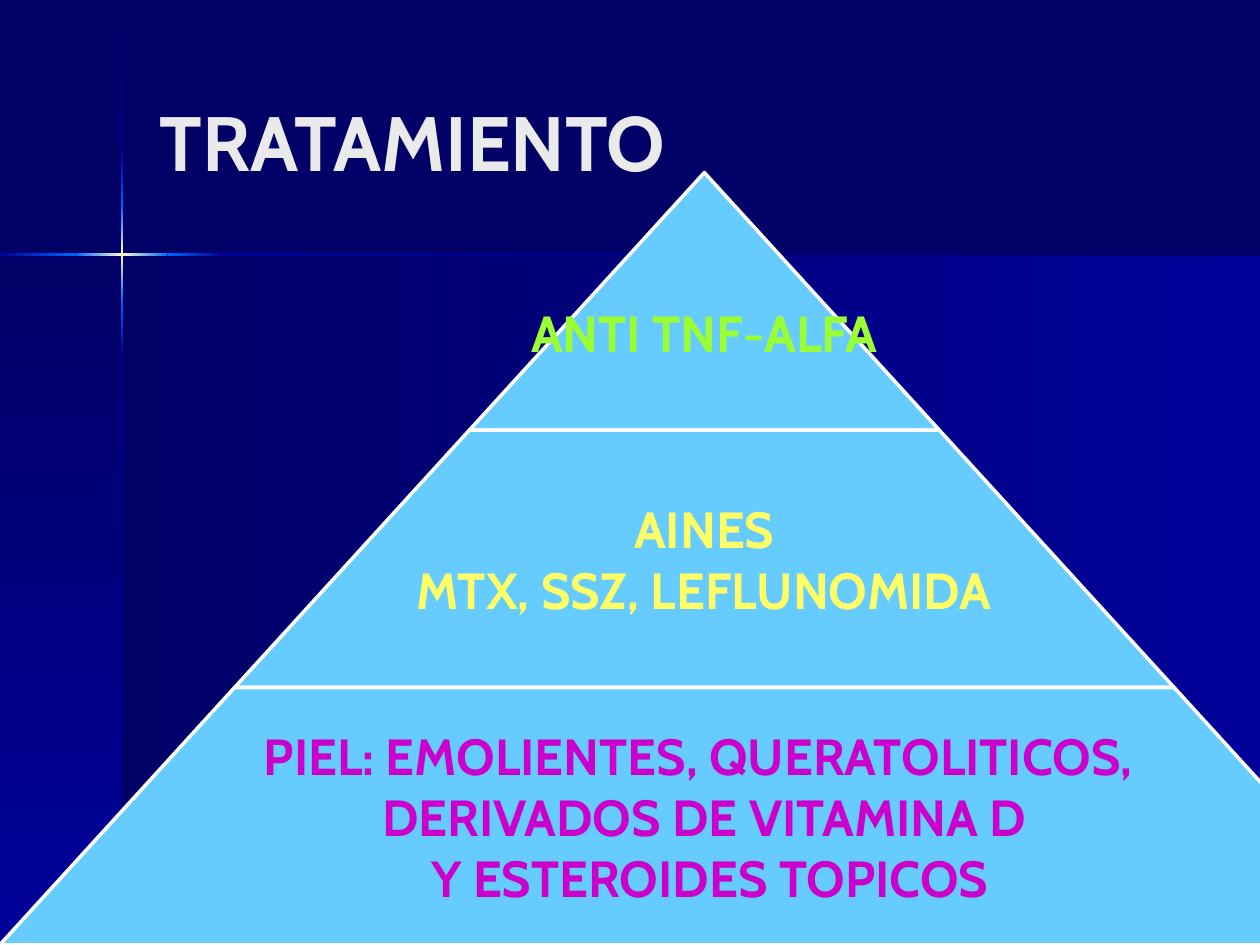
"""Build the treatment pyramid slide."""
from copy import deepcopy

from pptx import Presentation
from pptx.dml.color import RGBColor
from pptx.enum.shapes import MSO_SHAPE as Shape
from pptx.enum.text import MSO_ANCHOR as Anchor, PP_ALIGN as Align
from pptx.oxml.ns import qn
from pptx.util import Cm, Pt

FONT = "Cabin"
NAVY = RGBColor(0x00, 0x00, 0x66)
BLUE = RGBColor(0x00, 0x00, 0x99)
BRIGHT = RGBColor(0x00, 0x66, 0xFF)
CREAM = RGBColor(0xFF, 0xFF, 0xCC)
SKY = RGBColor(0x66, 0xCC, 0xFF)
WHITE = RGBColor(0xFF, 0xFF, 0xFF)
SILVER = RGBColor(0xEA, 0xEA, 0xEA)
LIME = RGBColor(0x99, 0xFF, 0x33)
YELLOW = RGBColor(0xFF, 0xFF, 0x66)
MAGENTA = RGBColor(0xCC, 0x00, 0xCC)

WIDTH, HEIGHT = 25.4, 19.05
CROSS_X, CROSS_Y, BEAM = 2.46, 5.13, 0.05
GLOW = (BRIGHT, CREAM, BRIGHT)
PANELS = [
    (CROSS_X, CROSS_Y, WIDTH - CROSS_X, HEIGHT - CROSS_Y, (NAVY, BLUE), False),
    (0, CROSS_Y, CROSS_X, HEIGHT - CROSS_Y, (NAVY, BLUE), True),
]
VERTICAL_BEAMS = [
    (0.03, 3.07, (NAVY, BLUE)),
    (7.16, HEIGHT, (BLUE, NAVY)),
    (6.05, 7.16, (BRIGHT, BLUE)),
    (3.07, 4.19, (BLUE, BRIGHT)),
    (4.19, 6.05, GLOW),
]
HORIZONTAL_BEAMS = [
    (4.5, WIDTH, (BLUE, NAVY)),
    (0, 1.54, (BLUE, BRIGHT)),
    (3.38, 4.5, (BRIGHT, BLUE)),
    (1.54, 3.38, GLOW),
]

TITLE = "TRATAMIENTO"
TIERS = [
    (["ANTI TNF-ALFA"], LIME, 9.47, 1.35),
    (["AINES", "MTX, SSZ, LEFLUNOMIDA"], YELLOW, 12.32, 0.1),
    (["PIEL: EMOLIENTES, QUERATOLITICOS, ", "DERIVADOS DE VITAMINA D",
      " Y ESTEROIDES TOPICOS"], MAGENTA, 18.47, 0.1),
]
APEX_X, APEX_Y = 14.2, 3.48
TIER_HEIGHT, TIER_STEP = 5.19, 9.47


def add_gradient(slide, left, top, width, height, colors, downward):
    shape = slide.shapes.add_shape(
        Shape.RECTANGLE, Cm(left), Cm(top), Cm(width), Cm(height))
    shape.shadow.inherit = False
    shape.line.fill.background()
    shape.fill.gradient()
    shape.fill.gradient_angle = 270 if downward else 0
    stop_list = shape.fill._xPr.find(qn("a:gradFill")).find(qn("a:gsLst"))
    while len(stop_list) < len(colors):
        stop_list.append(deepcopy(stop_list[0]))
    for index, (stop, color) in enumerate(zip(shape.fill.gradient_stops, colors)):
        stop.position = index / (len(colors) - 1)
        stop.color.rgb = color


def add_background(slide):
    slide.background.fill.solid()
    slide.background.fill.fore_color.rgb = NAVY
    for panel in PANELS:
        add_gradient(slide, *panel)
    for start, end, colors in VERTICAL_BEAMS:
        add_gradient(slide, CROSS_X - BEAM / 2, start, BEAM, end - start, colors, True)
    for start, end, colors in HORIZONTAL_BEAMS:
        add_gradient(slide, start, CROSS_Y - BEAM / 2, end - start, BEAM, colors, False)


def write(paragraph, text, size, color, alignment):
    paragraph.alignment = alignment
    run = paragraph.add_run()
    run.text = text
    run.font.name = FONT
    run.font.size = Pt(size)
    run.font.bold = True
    run.font.color.rgb = color


def add_title(slide):
    title = slide.shapes.title
    title.left, title.top, title.width, title.height = Cm(2.97), Cm(0.84), Cm(20.96), Cm(3.99)
    title.text_frame.vertical_anchor = Anchor.MIDDLE
    write(title.text_frame.paragraphs[0], TITLE, 44, SILVER, Align.LEFT)


def add_tier(slide, index, lines, color, text_width, top_inset):
    width = TIER_STEP * (index + 1)
    top = Cm(APEX_Y + TIER_HEIGHT * index)
    tier = slide.shapes.add_shape(
        Shape.TRAPEZOID, Cm(APEX_X - width / 2), top, Cm(width), Cm(TIER_HEIGHT))
    tier.adjustments[0] = TIER_STEP / 2 / TIER_HEIGHT
    tier.shadow.inherit = False
    tier.fill.solid()
    tier.fill.fore_color.rgb = SKY
    tier.line.color.rgb = WHITE
    tier.line.width = Pt(2)

    box = slide.shapes.add_textbox(
        Cm(APEX_X - text_width / 2), top, Cm(text_width), Cm(TIER_HEIGHT))
    frame = box.text_frame
    frame.word_wrap = True
    frame.vertical_anchor = Anchor.MIDDLE
    frame.margin_left = frame.margin_right = frame.margin_bottom = Cm(0.1)
    frame.margin_top = Cm(top_inset)
    for number, line in enumerate(lines):
        paragraph = frame.add_paragraph() if number else frame.paragraphs[0]
        write(paragraph, line, 29, color, Align.CENTER)


def main():
    presentation = Presentation()
    presentation.slide_width, presentation.slide_height = Cm(WIDTH), Cm(HEIGHT)
    slide = presentation.slides.add_slide(presentation.slide_layouts[5])
    add_background(slide)
    add_title(slide)
    for index, tier in enumerate(TIERS):
        add_tier(slide, index, *tier)
    presentation.save("out.pptx")


if __name__ == "__main__":
    main()
